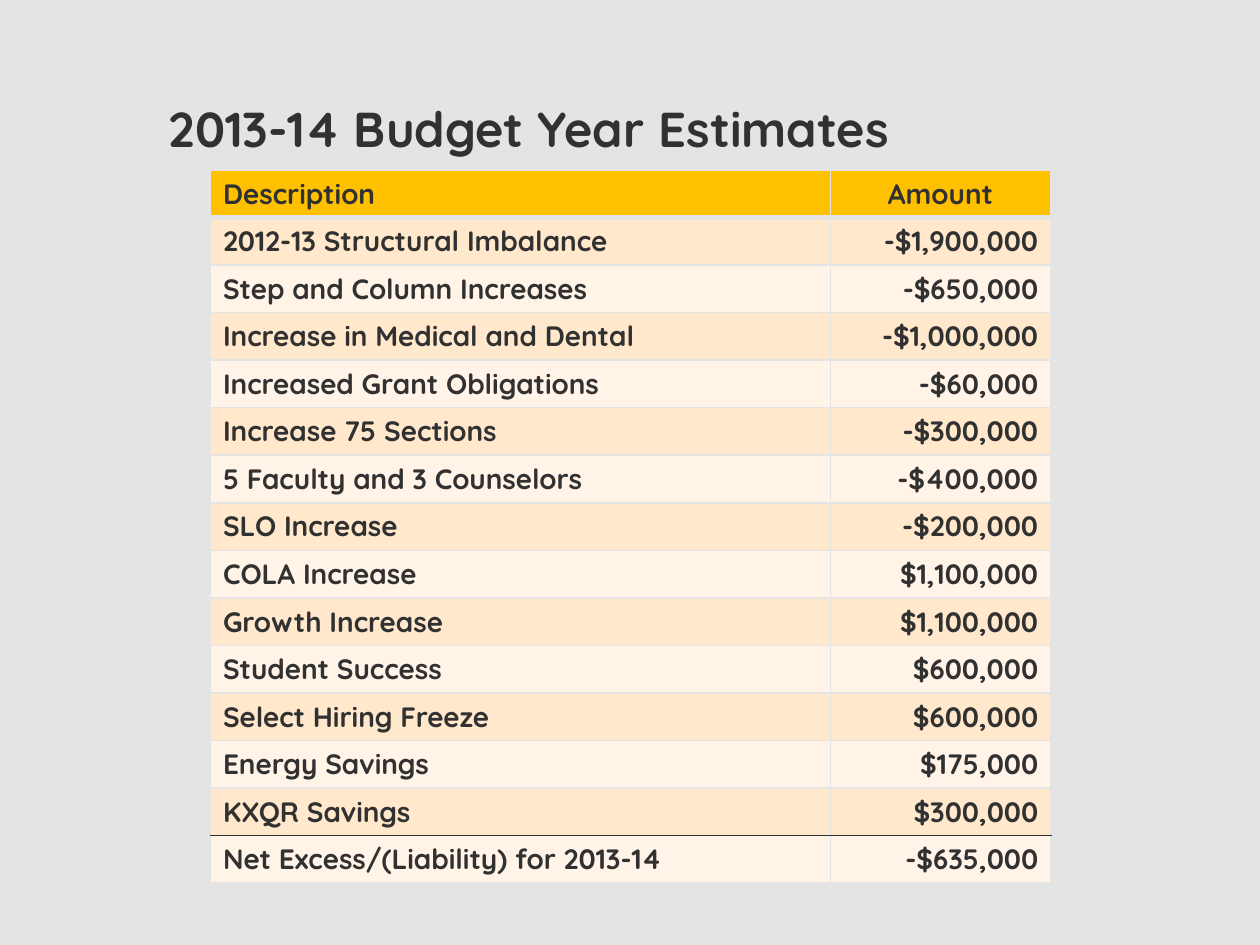
from pptx import Presentation
from pptx.dml.color import RGBColor
from pptx.enum import text
from pptx.oxml import parse_xml
from pptx.oxml.ns import nsdecls
from pptx.util import Inches, Pt

COLORS = {
    "back": "E4E4E4",
    "ink": "313131",
    "head": "FFC000",
    "dark": "FFE8CC",
    "light": "FFF4E7",
}
FONT = "Quicksand"
ALIGN = text.PP_ALIGN

ROWS = [
    ("Description", "Amount"),
    ("2012-13 Structural Imbalance", "-$1,900,000"),
    ("Step and Column Increases", "-$650,000"),
    ("Increase in Medical and Dental", "-$1,000,000"),
    ("Increased Grant Obligations", "-$60,000"),
    ("Increase 75 Sections", "-$300,000"),
    ("5 Faculty and 3 Counselors", "-$400,000"),
    ("SLO Increase", "-$200,000"),
    ("COLA Increase", "$1,100,000"),
    ("Growth Increase", "$1,100,000"),
    ("Student Success", "$600,000"),
    ("Select Hiring Freeze", "$600,000"),
    ("Energy Savings", "$175,000"),
    ("KXQR Savings", "$300,000"),
    ("Net Excess/(Liability) for 2013-14", "-$635,000"),
]


def rgb(name):
    return RGBColor.from_string(COLORS[name])


class Deck:
    """Holds the style and the current slide."""

    def __init__(self, wide, high):
        self.prs = Presentation()
        self.prs.slide_width = Inches(wide)
        self.prs.slide_height = Inches(high)

    def add_slide(self):
        self.slide = self.prs.slides.add_slide(self.prs.slide_layouts[5])
        fill = self.slide.background.fill
        fill.solid()
        fill.fore_color.rgb = rgb("back")

    def label(self, frame, words, size, align):
        frame.text = words
        para = frame.paragraphs[0]
        para.alignment = align
        for run in para.runs:
            run.font.name = FONT
            run.font.size = Pt(size)
            run.font.bold = True
            run.font.color.rgb = rgb("ink")

    def title(self, words, left, top, width, height):
        box = self.slide.shapes.title
        box.left, box.top = Inches(left), Inches(top)
        box.width, box.height = Inches(width), Inches(height)
        box.text_frame.vertical_anchor = text.MSO_ANCHOR.MIDDLE
        self.label(box.text_frame, words, 28, ALIGN.LEFT)

    def border(self, cell, lines):
        """Draw the sides of a cell; lines maps a side to (color, points)."""
        props = cell._tc.get_or_add_tcPr()
        for spot, (side, (color, points)) in enumerate(lines.items()):
            props.insert(spot, parse_xml(
                f'<a:ln{side} {nsdecls("a")} w="{Pt(points)}"><a:solidFill>'
                f'<a:srgbClr val="{COLORS[color]}"/></a:solidFill></a:ln{side}>'))

    def table(self, rows, left, top, widths, height):
        """Draw a banded table with a header row and a ruled-off total row."""
        table = self.slide.shapes.add_table(
            len(rows), len(widths), Inches(left), Inches(top),
            Inches(sum(widths)), Inches(height)).table
        for col, width in zip(table.columns, widths):
            col.width = Inches(width)
        last = len(rows) - 1
        for i, row in enumerate(rows):
            band = "head" if i == 0 else "dark" if i % 2 else "light"
            lines = dict.fromkeys("LRTB", ("back", 1))
            if i == 0:
                lines["B"] = ("back", 3)
            elif i == 1:
                lines["T"] = ("back", 3)
            elif i == last - 1:
                lines["B"] = ("ink", 1)
            elif i == last:
                lines["T"] = ("ink", 1)
            for j, words in enumerate(row):
                cell = table.cell(i, j)
                cell.fill.solid()
                cell.fill.fore_color.rgb = rgb(band)
                self.border(cell, lines)
                side = ALIGN.CENTER if i == 0 else ALIGN.RIGHT
                self.label(cell.text_frame, words, 16, side if j else ALIGN.LEFT)

    def save(self):
        self.prs.save("out.pptx")


def main():
    deck = Deck(10, 7.5)
    deck.add_slide()
    deck.title("2013-14 Budget Year Estimates", 1.24, 0.45, 8.34, 1.13)
    deck.table(ROWS, 1.67, 1.35, (4.92, 1.75), 5.5)
    deck.save()


if __name__ == "__main__":
    main()
